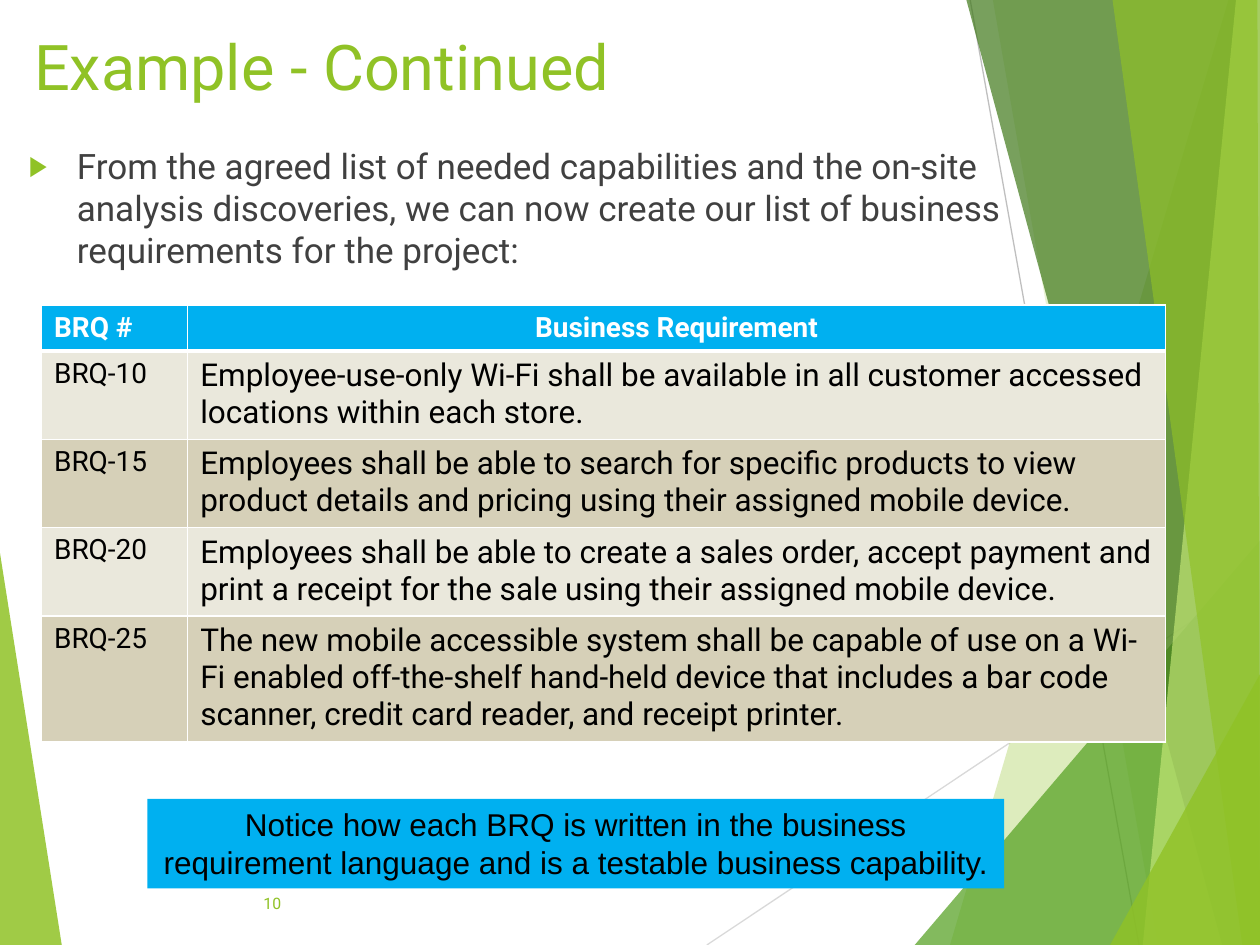
"""Build the business requirements example slide."""
from lxml.etree import SubElement
from pptx import Presentation
from pptx.dml.color import RGBColor
from pptx.enum.shapes import MSO_CONNECTOR, MSO_SHAPE
from pptx.enum.text import MSO_ANCHOR as Anchor, MSO_AUTO_SIZE as AutoSize, PP_ALIGN as Align
from pptx.oxml import parse_xml
from pptx.oxml.ns import nsdecls, qn
from pptx.util import Pt

TITLE = "Example - Continued"
INTRO = ("From the agreed list of needed capabilities and the on-site analysis discoveries, "
         "we can now create our list of business requirements for the project:")
HEADER = ("BRQ #", "Business Requirement")
REQUIREMENTS = [
    ("BRQ-10", "Employee-use-only Wi-Fi shall be available in all customer accessed "
               "locations within each store."),
    ("BRQ-15", "Employees shall be able to search for specific products to view product "
               "details and pricing using their assigned mobile device."),
    ("BRQ-20", "Employees shall be able to create a sales order, accept payment and print "
               "a receipt for the sale using their assigned mobile device."),
    ("BRQ-25", "The new mobile accessible system shall be capable of use on a Wi-Fi enabled "
               "off-the-shelf hand-held device that includes a bar code scanner, credit card "
               "reader, and receipt printer."),
]
NOTICE = ("Notice how each BRQ is written in the business requirement language "
          "and is a testable business capability.")
PAGE = "10"

THEME = {
    "font": "Roboto", "notice_font": "Arial",
    "accent": "90C226", "leaf": "54A021", "forest": "3F7819", "lime": "C0E474",
    "pale_line": "D9D9D9", "mid_line": "BFBFBF",
    "body": "404040", "ink": "000000", "white": "FFFFFF", "blue": "00B0F0",
    "bands": ("EAE8DC", "D6D0B8"),
    "title_pt": 36, "intro_pt": 20, "row_pt": 18, "label_pt": 16, "page_pt": 9,
}

PX = 9144
SLIDE = (1000, 750)
TITLE_BOX = (17, 17, 694, 144)
INTRO_BOX = (13, 110, 875, 523)
INTRO_INDENT = 38
PAGE_BOX = (0, 697, 233, 40)
NOTICE_BOX = (117, 634, 680, 71)
TABLE_AT = (33, 242)
COLUMNS = (116, 776)
ROWS = (35, 69, 69, 69, 98)

LEFT_WEDGE = ("accent", 85, [(0, 439), (49, 750), (0, 750)])
RAYS = [("pale_line", (561, 750, 1000, 457)), ("mid_line", (770, 0, 904, 750))]
RIGHT_FACETS = [
    ("accent", 30, [(975, 0), (754, 750), (1000, 750), (1000, 0)]),
    ("accent", 20, [(788, 0), (919, 750), (1000, 750), (1000, 0)]),
    ("leaf", 72, [(726, 750), (1000, 429), (1000, 750)]),
    ("forest", 70, [(767, 0), (970, 750), (1000, 750), (1000, 0)]),
    ("lime", 70, [(981, 0), (907, 750), (1000, 750), (1000, 0)]),
    ("accent", 65, [(883, 0), (986, 750), (1000, 750), (998, 0)]),
    ("accent", 80, [(881, 750), (1000, 535), (1000, 750)]),
]


def px(*values):
    return [v * PX for v in values]


def rgb(name):
    return RGBColor.from_string(THEME.get(name, name))


def paint(target, color):
    target.fill.solid()
    target.fill.fore_color.rgb = rgb(color)


def place(sp, box):
    sp.left, sp.top, sp.width, sp.height = px(*box)


def write(tf, text, size, color, align=Align.LEFT, font="font", bold=False):
    p = tf.paragraphs[0]
    p.alignment = align
    r = p.add_run()
    r.text = text
    r.font.name = THEME[font]
    r.font.size = Pt(THEME[size])
    r.font.color.rgb = rgb(color)
    r.font.bold = bold
    return p


def add_facet(s, color, alpha, points):
    builder = s.shapes.build_freeform(*points[0], scale=PX)
    builder.add_line_segments(points[1:], close=True)
    sp = builder.convert_to_shape()
    sp.shadow.inherit = False
    paint(sp, color)
    sp.line.fill.background()
    clr = sp.fill._xPr.find(qn("a:solidFill"))[0]
    SubElement(clr, qn("a:alpha"), val=str(alpha * 1000))


def add_ray(s, color, ends):
    ray = s.shapes.add_connector(MSO_CONNECTOR.STRAIGHT, *px(*ends))
    ray.line.color.rgb = rgb(color)
    ray.line.width = Pt(0.75)
    SubElement(ray._element.spPr, qn("a:effectLst"))


def add_backdrop(s):
    add_facet(s, *LEFT_WEDGE)
    for ray in RAYS:
        add_ray(s, *ray)
    for facet in RIGHT_FACETS:
        add_facet(s, *facet)


def fill_placeholders(s):
    title, body = s.placeholders[0], s.placeholders[1]
    for sp, box in ((title, TITLE_BOX), (body, INTRO_BOX)):
        s.shapes._spTree.append(sp._element)
        place(sp, box)
        sp.text_frame.word_wrap = True
        sp.text_frame.auto_size = AutoSize.NONE
        sp.text_frame.vertical_anchor = Anchor.TOP
    write(title.text_frame, TITLE, "title_pt", "accent")
    p = write(body.text_frame, INTRO, "intro_pt", "body")
    p.space_before = Pt(10)
    pPr = p._p.get_or_add_pPr()
    pPr.set("marL", str(INTRO_INDENT * PX))
    pPr.set("indent", str(-INTRO_INDENT * PX))
    SubElement(SubElement(pPr, qn("a:buClr")), qn("a:srgbClr"), val=THEME["accent"])
    SubElement(pPr, qn("a:buSzPct"), val="80000")
    SubElement(pPr, qn("a:buFont"), typeface="Arial")
    SubElement(pPr, qn("a:buChar"), char="▶")


def set_borders(cell, top, bottom):
    tcPr = cell._tc.get_or_add_tcPr()
    for i, (side, width) in enumerate((("L", 1), ("R", 1), ("T", top), ("B", bottom))):
        tcPr.insert(i, parse_xml(
            f'<a:ln{side} {nsdecls("a")} w="{Pt(width)}"><a:solidFill>'
            f'<a:srgbClr val="{THEME["white"]}"/></a:solidFill></a:ln{side}>'))


def add_requirements(s):
    size = (sum(COLUMNS), sum(ROWS))
    table = s.shapes.add_table(len(ROWS), len(COLUMNS), *px(*TABLE_AT, *size)).table
    for column, width in zip(table.columns, COLUMNS):
        column.width = width * PX
    for i, values in enumerate([HEADER, *REQUIREMENTS]):
        table.rows[i].height = ROWS[i] * PX
        head = i == 0
        for j, text in enumerate(values):
            cell = table.cell(i, j)
            paint(cell, "blue" if head else THEME["bands"][(i - 1) % 2])
            set_borders(cell, 3 if i == 1 else 1, 3 if head else 1)
            write(cell.text_frame, text,
                  "row_pt" if j and not head else "label_pt",
                  "white" if head else "ink",
                  Align.CENTER if head and j else Align.LEFT, bold=head)


def add_page_number(s):
    tf = s.shapes.add_textbox(*px(*PAGE_BOX)).text_frame
    tf.word_wrap = True
    tf.vertical_anchor = Anchor.MIDDLE
    write(tf, PAGE, "page_pt", "accent", Align.RIGHT)


def add_notice(s):
    sp = s.shapes.add_shape(MSO_SHAPE.RECTANGLE, *px(*NOTICE_BOX))
    sp.shadow.inherit = False
    paint(sp, "blue")
    sp.line.fill.background()
    tf = sp.text_frame
    tf.word_wrap = True
    tf.auto_size = AutoSize.SHAPE_TO_FIT_TEXT
    tf.vertical_anchor = Anchor.TOP
    write(tf, NOTICE, "row_pt", "ink", Align.CENTER, "notice_font")


def main():
    prs = Presentation()
    prs.slide_width, prs.slide_height = px(*SLIDE)
    s = prs.slides.add_slide(prs.slide_layouts[1])
    add_backdrop(s)
    fill_placeholders(s)
    add_page_number(s)
    add_requirements(s)
    add_notice(s)
    prs.save("out.pptx")


if __name__ == "__main__":
    main()
